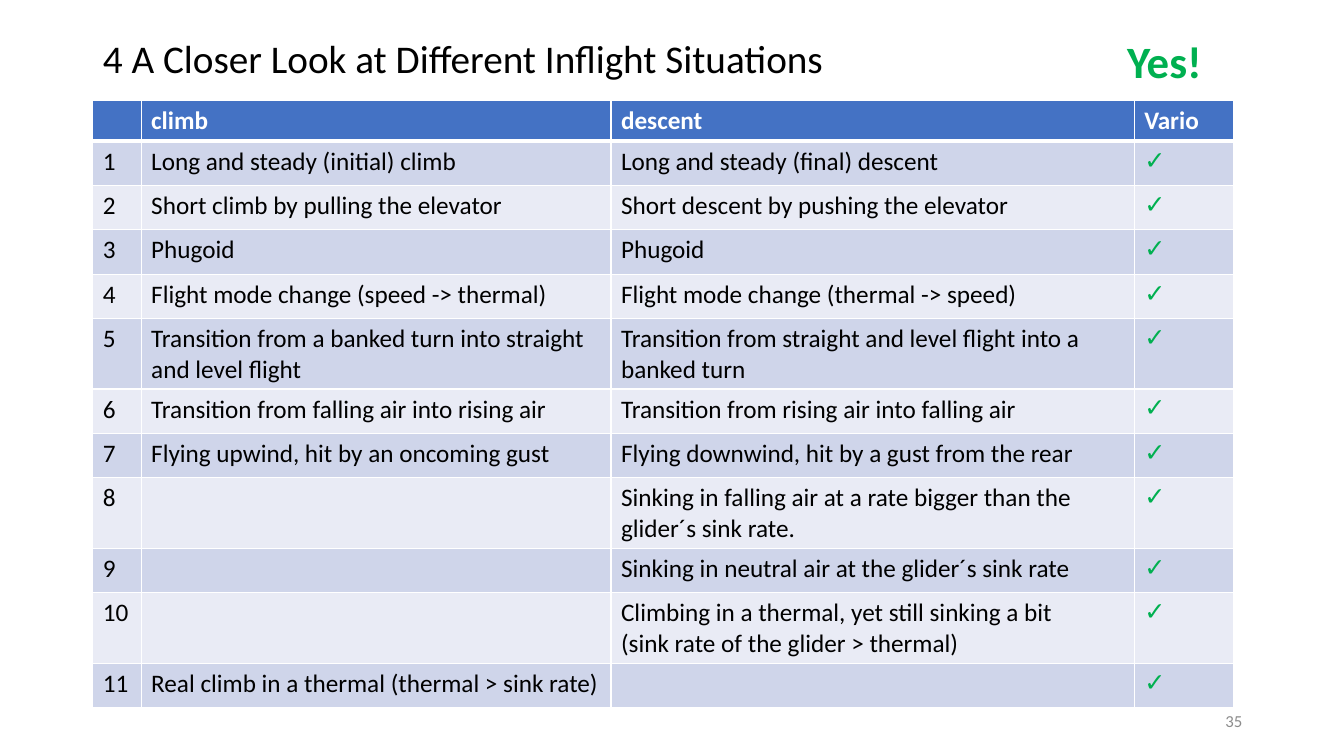
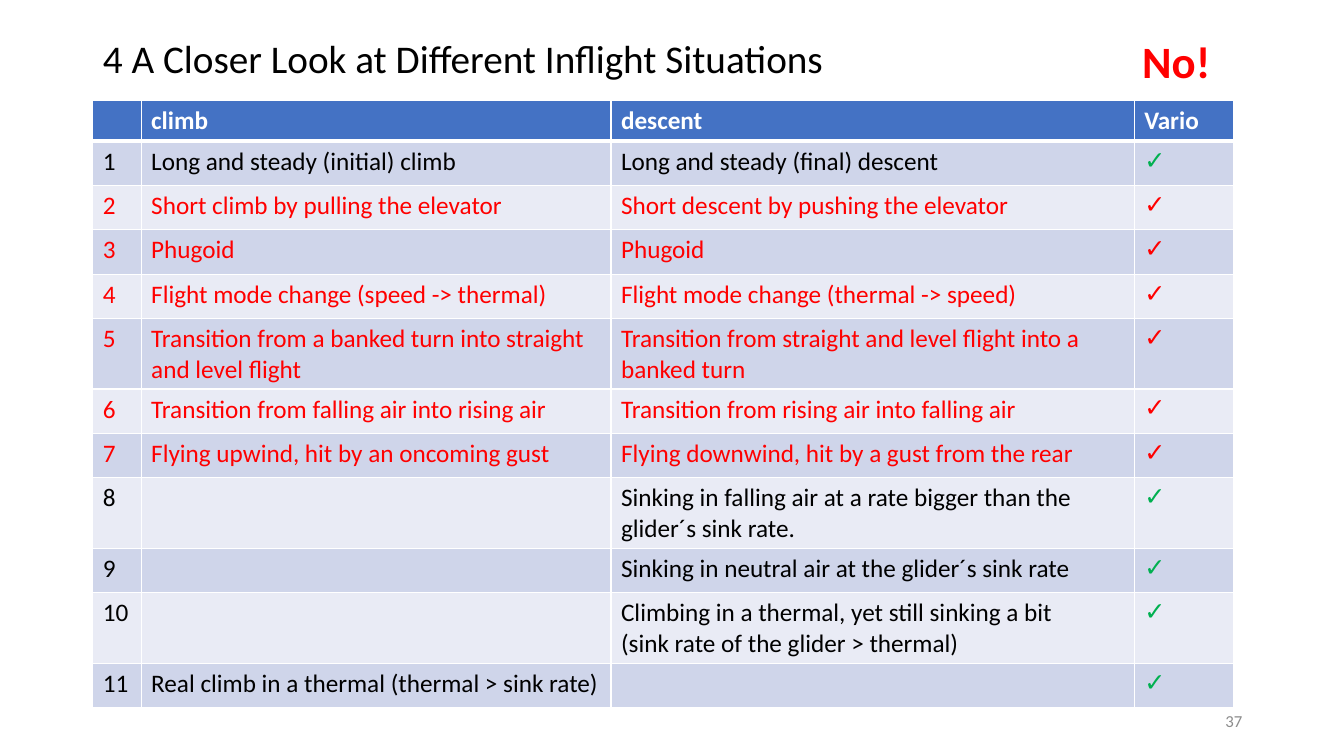
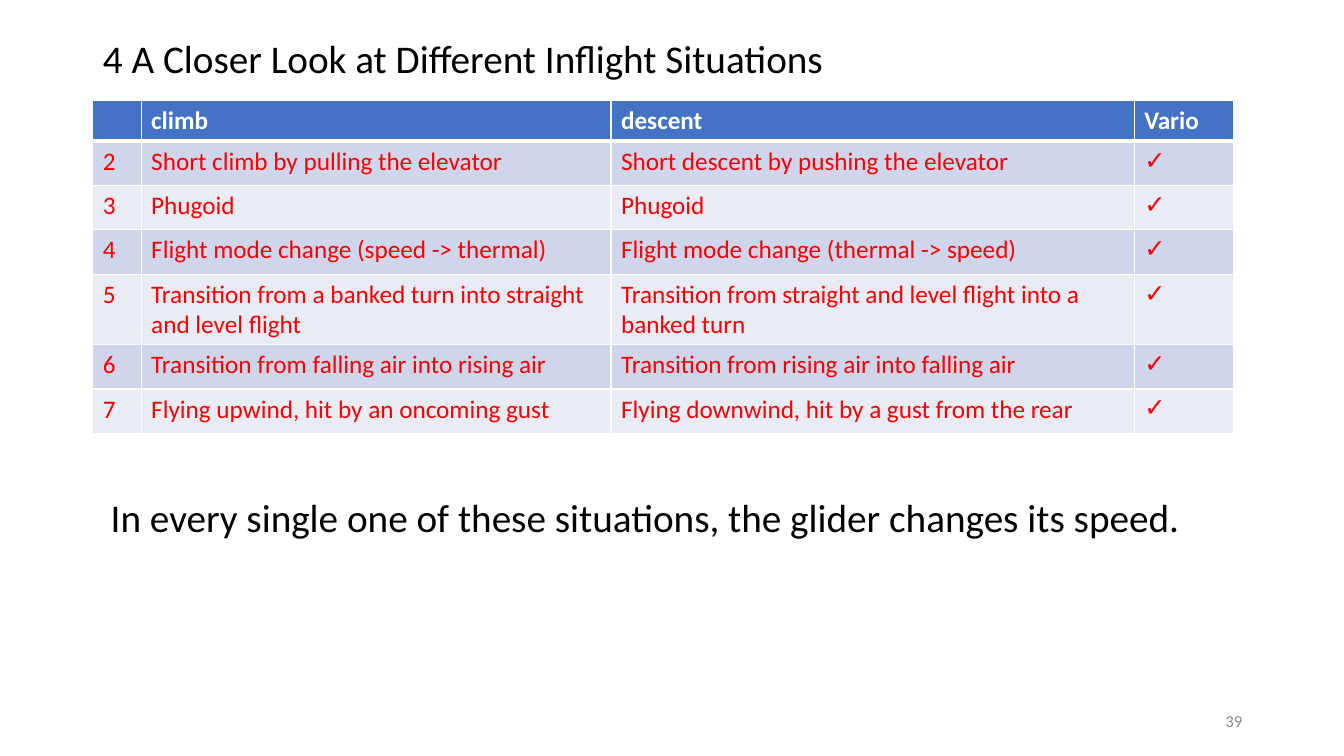
from lxml import etree
from pptx import Presentation
from pptx.dml.color import RGBColor
from pptx.enum.text import MSO_ANCHOR, MSO_AUTO_SIZE, PP_ALIGN
from pptx.oxml.ns import qn
from pptx.util import Emu, Pt

EMU_PER_PX = 9144
LEFT, RIGHT = PP_ALIGN.LEFT, PP_ALIGN.RIGHT
MIDDLE, TOP = MSO_ANCHOR.MIDDLE, MSO_ANCHOR.TOP
NO_AUTOFIT = MSO_AUTO_SIZE.NONE

BLACK = RGBColor(0x00, 0x00, 0x00)
WHITE = RGBColor(0xFF, 0xFF, 0xFF)
GREEN = RGBColor(0x00, 0xB0, 0x50)
RED = RGBColor(0xFF, 0x00, 0x00)
GREY = RGBColor(0x8C, 0x8C, 0x8C)
HEADER_BLUE = RGBColor(0x44, 0x72, 0xC4)
BANDS = (RGBColor(0xCF, 0xD5, 0xEA), RGBColor(0xE9, 0xEB, 0xF5))

TEXT_FONT = "Calibri"
CHECK_FONT = "Arial"
CHECK = "✓"
TITLE = "4 A Closer Look at Different Inflight Situations"
HEADERS = ("", "climb", "descent", "Vario")
COLUMN_WIDTHS = (48, 466, 519, 99)
HEADER_HEIGHT, ROW_HEIGHT = 39, 44
SPEED_CHANGES = range(2, 8)

SITUATIONS = {
    1: ("Long and steady (initial) climb", "Long and steady (final) descent"),
    2: ("Short climb by pulling the elevator", "Short descent by pushing the elevator"),
    3: ("Phugoid", "Phugoid"),
    4: ("Flight mode change (speed -> thermal)", "Flight mode change (thermal -> speed)"),
    5: ("Transition from a banked turn into straight and level flight",
        "Transition from straight and level flight into a banked turn"),
    6: ("Transition from falling air into rising air",
        "Transition from rising air into falling air"),
    7: ("Flying upwind, hit by an oncoming gust",
        "Flying downwind, hit by a gust from the rear"),
    8: ("", "Sinking in falling air at a rate bigger than the glider´s sink rate."),
    9: ("", "Sinking in neutral air at the glider´s sink rate"),
    10: ("", "Climbing in a thermal, yet still sinking a bit\n"
             "(sink rate of the glider > thermal)"),
    11: ("Real climb in a thermal (thermal > sink rate)", ""),
}


def px(length):
    return Emu(length * EMU_PER_PX)


def write_text(frame, text, *, size=18, color=BLACK, bold=False, font=TEXT_FONT,
               align=LEFT, anchor=TOP, line_spacing=None):
    frame.text = text
    frame.vertical_anchor = anchor
    for paragraph in frame.paragraphs:
        paragraph.alignment = align
        paragraph.line_spacing = line_spacing
        for item in (paragraph, *paragraph.runs):
            item.font.size = Pt(size)
            item.font.name = font
            item.font.bold = bold
            item.font.color.rgb = color


def set_borders(cell, bottom=1, top=1):
    properties = cell._tc.get_or_add_tcPr()
    for tag, width in (("lnL", 1), ("lnR", 1), ("lnT", top), ("lnB", bottom)):
        line = etree.SubElement(properties, qn(f"a:{tag}"), w=str(Pt(width)))
        fill = etree.SubElement(line, qn("a:solidFill"))
        etree.SubElement(fill, qn("a:srgbClr"), val=str(WHITE))


class Deck:
    def __init__(self):
        self.presentation = Presentation()
        self.presentation.slide_width = px(1333)
        self.presentation.slide_height = px(750)
        self.slide = None

    def add_slide(self, number):
        layout = self.presentation.slide_layouts[5]
        self.slide = self.presentation.slides.add_slide(layout)
        title = self.slide.shapes.title
        title.left, title.top, title.width, title.height = map(px, (92, 21, 1150, 79))
        write_text(title.text_frame, TITLE, size=28, anchor=MIDDLE, line_spacing=0.9)
        title.text_frame.auto_size = NO_AUTOFIT
        self.add_text(str(number), 942, 695, 300, 40, wrap=True,
                      size=12, color=GREY, align=RIGHT, anchor=MIDDLE)

    def add_text(self, text, left, top, width, height, wrap=False, **text_format):
        box = self.slide.shapes.add_textbox(*map(px, (left, top, width, height)))
        box.text_frame.word_wrap = wrap
        write_text(box.text_frame, text, **text_format)

    def add_cell(self, cell, text, fill, bottom=1, top=1, **text_format):
        write_text(cell.text_frame, text, **text_format)
        set_borders(cell, bottom, top)
        cell.fill.solid()
        cell.fill.fore_color.rgb = fill

    def add_situations(self, numbers, red_numbers=()):
        height = HEADER_HEIGHT + ROW_HEIGHT * len(numbers)
        table = self.slide.shapes.add_table(
            len(numbers) + 1, len(HEADERS),
            px(92), px(100), px(sum(COLUMN_WIDTHS)), px(height)).table
        for column, width in zip(table.columns, COLUMN_WIDTHS):
            column.width = px(width)
        table.rows[0].height = px(HEADER_HEIGHT)
        for index, header in enumerate(HEADERS):
            self.add_cell(table.cell(0, index), header, HEADER_BLUE,
                          bottom=3, color=WHITE, bold=True)
        for row, number in enumerate(numbers, 1):
            table.rows[row].height = px(ROW_HEIGHT)
            is_red = number in red_numbers
            band = BANDS[(row - 1) % 2]
            top = 3 if row == 1 else 1
            for index, text in enumerate((str(number), *SITUATIONS[number])):
                self.add_cell(table.cell(row, index), text, band, top=top,
                              color=RED if is_red else BLACK)
            self.add_cell(table.cell(row, 3), CHECK, band, top=top, font=CHECK_FONT,
                          color=RED if is_red else GREEN)


def main():
    deck = Deck()

    deck.add_slide(35)
    deck.add_situations(SITUATIONS)
    deck.add_text("Yes!", 1108, 29, 95, 64, size=32, color=GREEN, bold=True)

    deck.add_slide(37)
    deck.add_situations(SITUATIONS, SPEED_CHANGES)
    deck.add_text("No!", 1123, 29, 89, 64, size=32, color=RED, bold=True)

    deck.add_slide(39)
    deck.add_text("In every single one of these situations, the glider changes its speed.",
                  100, 484, 1083, 57, size=28)
    deck.add_situations(SPEED_CHANGES, SPEED_CHANGES)

    deck.presentation.save("out.pptx")


if __name__ == "__main__":
    main()
